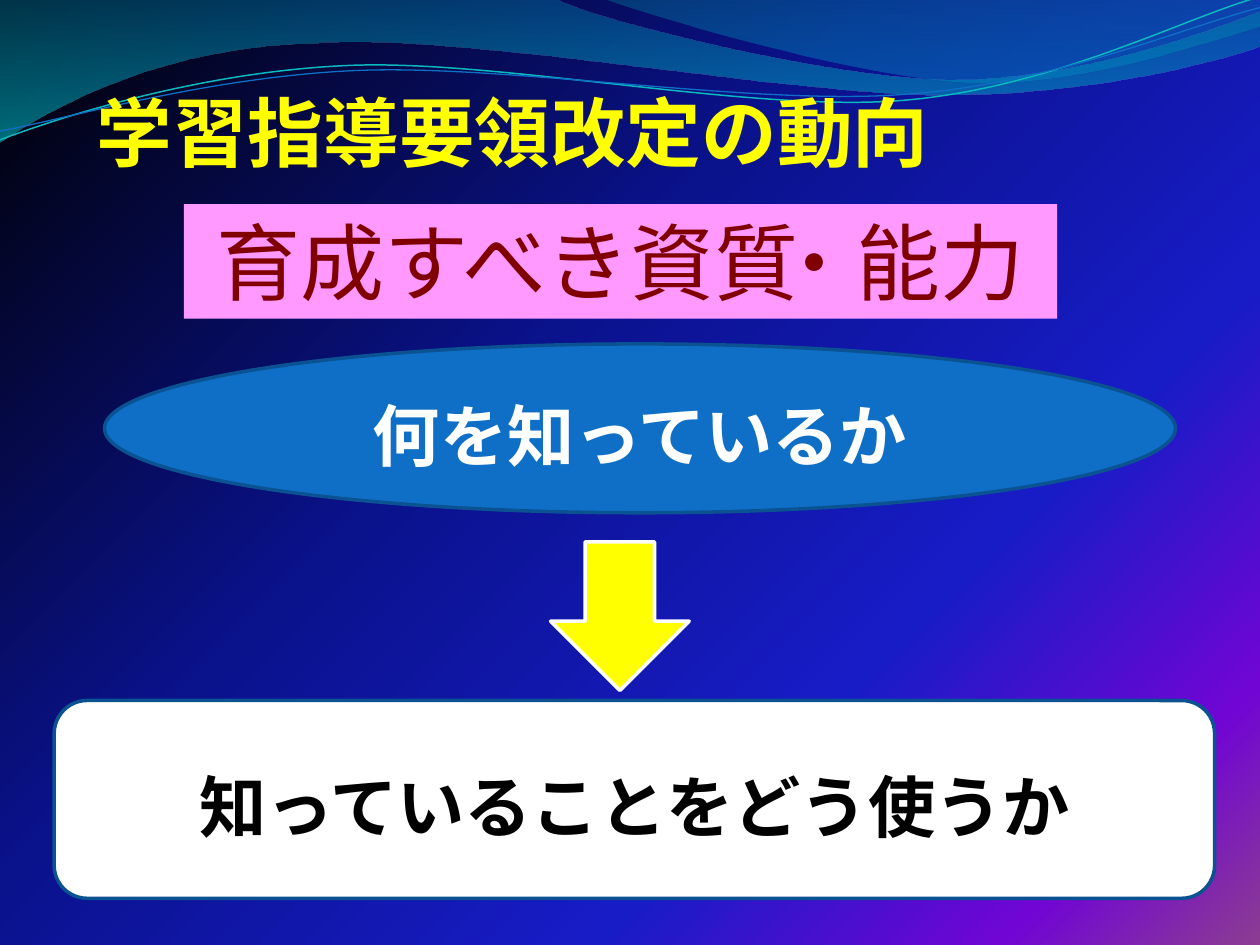
"""Build a slide on the direction of the curriculum guideline revision."""
from lxml.etree import SubElement
from pptx import Presentation
from pptx.dml.color import RGBColor
from pptx.enum.shapes import MSO_SHAPE as Shape
from pptx.enum.text import MSO_ANCHOR as Anchor, MSO_AUTO_SIZE as AutoSize, PP_ALIGN as Align
from pptx.oxml.ns import qn
from pptx.util import Inches, Pt

COLORS = {
    "yellow": "FFFF00", "white": "FFFFFF", "black": "000000",
    "pink": "FF99FF", "maroon": "800000", "blue": "0F6FC6",
    "navy": "0B5292", "teal": "0AB8BF",
}
SKY = [(0, "000000", 100), (40, "0A128C", 100), (70, "181CC7", 100),
       (88, "7005D4", 100), (100, "8C3D91", 100)]
LEFT_WAVE = [(0, "0074A1", 45), (100, "00C6CF", 55)]
RIGHT_WAVE = [(0, "00A1A9", 30), (80, "008BBF", 45)]
GOTHIC = "Noto Sans CJK JP"


def rgb(name):
    return RGBColor.from_string(COLORS[name])


def paint_gradient(fill, owner, stops, angle):
    fill.gradient()
    fill.gradient_angle = 360 - angle
    stop_list = owner.find(".//" + qn("a:gsLst"))
    for old_stop in list(stop_list):
        stop_list.remove(old_stop)
    for position, color, opacity in stops:
        stop = SubElement(stop_list, qn("a:gs"), pos=str(position * 1000))
        shade = SubElement(stop, qn("a:srgbClr"), val=color)
        if opacity < 100:
            SubElement(shade, qn("a:alpha"), val=str(opacity * 1000))


def add_curve(page, bounds, points, close):
    """Draw a start point, then segments of two (line) or six (Bézier) numbers."""
    left, top, width, height = bounds
    builder = page.shapes.build_freeform(Inches(left), Inches(top))
    builder.add_line_segments([(Inches(left + width), Inches(top + height))], close=False)
    curve = builder.convert_to_shape()
    curve.shadow.inherit = False
    outline = curve.element.find(".//" + qn("a:pathLst"))[0]
    for command in list(outline):
        outline.remove(command)
    for index, segment in enumerate(points):
        tag = "a:moveTo" if index == 0 else "a:lnTo" if len(segment) == 2 else "a:cubicBezTo"
        command = SubElement(outline, qn(tag))
        for x, y in zip(segment[::2], segment[1::2]):
            SubElement(command, qn("a:pt"), x=str(Inches(x - left)), y=str(Inches(y - top)))
    if close:
        SubElement(outline, qn("a:close"))
    return curve


def add_wave(page, bounds, points, stops):
    wave = add_curve(page, bounds, points, True)
    paint_gradient(wave.fill, wave.element, stops, 90)
    wave.line.fill.background()


def add_strand(page, bounds, points, color, width):
    strand = add_curve(page, bounds, points, False)
    strand.fill.background()
    strand.line.color.rgb = rgb(color)
    strand.line.width = Pt(width)


def add_figure(page, kind, bounds, fill, line=None):
    figure = page.shapes.add_shape(kind, *map(Inches, bounds))
    figure.shadow.inherit = False
    figure.fill.solid()
    figure.fill.fore_color.rgb = rgb(fill)
    if line:
        figure.line.color.rgb = rgb(line)
        figure.line.width = Pt(2)
    else:
        figure.line.fill.background()
    return figure


def write(box, parts, size, color, anchor=Anchor.MIDDLE, align=Align.CENTER,
          face=GOTHIC, heading=True):
    """Write one paragraph from pairs of text and letter spacing in points."""
    frame = box.text_frame
    frame.word_wrap = True
    frame.vertical_anchor = anchor
    para = frame.paragraphs[0]
    para.alignment = align
    for text, spacing in parts:
        span = para.add_run()
        span.text = text
        font = span.font
        font.size, font.name, font.bold = Pt(size), face, heading
        font.color.rgb = rgb(color)
        properties = span._r.get_or_add_rPr()
        SubElement(properties, qn("a:ea"), typeface=face)
        if heading:
            properties.set("cap", "small")
        if spacing:
            properties.set("spc", str(round(spacing * 100)))


def draw_background(page):
    paint_gradient(page.background.fill, page.element, SKY, 45)
    add_wave(page, (-0.01, -0.01, 10.02, 1.14),
             [(0, 0), (4.4, -0.01), (4.76, 0.17, 6.64, 0.63, 7.58, 0.63),
              (8.53, 0.63, 9.58, 0.26, 10, 0.09), (10.01, 0.36),
              (9.83, 0.44, 8.7, 0.76, 7.46, 0.75),
              (6.22, 0.75, 3.82, 0.28, 2.57, 0.34),
              (1.29, 0.36, 0.46, 0.83, -0.01, 1.13), (0, 0)], LEFT_WAVE)
    add_wave(page, (4.79, -0.01, 5.21, 0.7),
             [(4.79, -0.01), (5.09, 0.11, 6.82, 0.62, 7.69, 0.65),
              (8.56, 0.69, 9.61, 0.32, 10, 0.21), (10, 0), (4.79, -0.01)], RIGHT_WAVE)
    add_strand(page, (0, -0.02, 9.98, 1.13),
               [(0, 1.11), (0.48, 0.93, 1.58, 0.57, 2.77, 0.52),
                (3.95, 0.47, 5.93, 0.89, 7.13, 0.8),
                (8.33, 0.71, 9.38, 0.15, 9.98, -0.02)], "teal", 0.85)
    add_strand(page, (0, 0.06, 10, 0.98),
               [(0, 1.04), (0.47, 0.96, 1.64, 0.61, 2.83, 0.56),
                (4.03, 0.51, 5.97, 0.84, 7.17, 0.75),
                (8.36, 0.67, 9.41, 0.21, 10, 0.06)], "blue", 0.75)


def main():
    deck = Presentation()
    deck.slide_width, deck.slide_height = Inches(10), Inches(7.5)
    page = deck.slides.add_slide(deck.slide_layouts[6])
    draw_background(page)

    title = page.shapes.add_textbox(*map(Inches, (0.67, 0.44, 8.9, 1.04)))
    write(title, [("学習指導要領改定の動向", 0)], 54, "yellow", Anchor.BOTTOM, Align.LEFT)

    add_figure(page, Shape.DOWN_ARROW, (4.37, 4.3, 1.1, 1.18), "yellow", "white")

    theme = add_figure(page, Shape.RECTANGLE, (1.46, 1.62, 6.93, 0.91), "pink")
    write(theme, [("育成すべき資", 0), ("質・", -15.4), ("能力", 0)], 48, "maroon",
          Anchor.TOP, face="Arial", heading=False)
    theme.text_frame.auto_size = AutoSize.SHAPE_TO_FIT_TEXT

    knowledge = add_figure(page, Shape.OVAL, (0.83, 2.73, 8.5, 1.34), "blue", "navy")
    write(knowledge, [("何を知っているか", 0)], 48, "white")

    usage = add_figure(page, Shape.ROUNDED_RECTANGLE, (0.43, 5.56, 9.21, 1.57), "white", "navy")
    write(usage, [("知っていることをどう使うか", 0)], 48, "black")

    deck.save("out.pptx")


if __name__ == "__main__":
    main()
